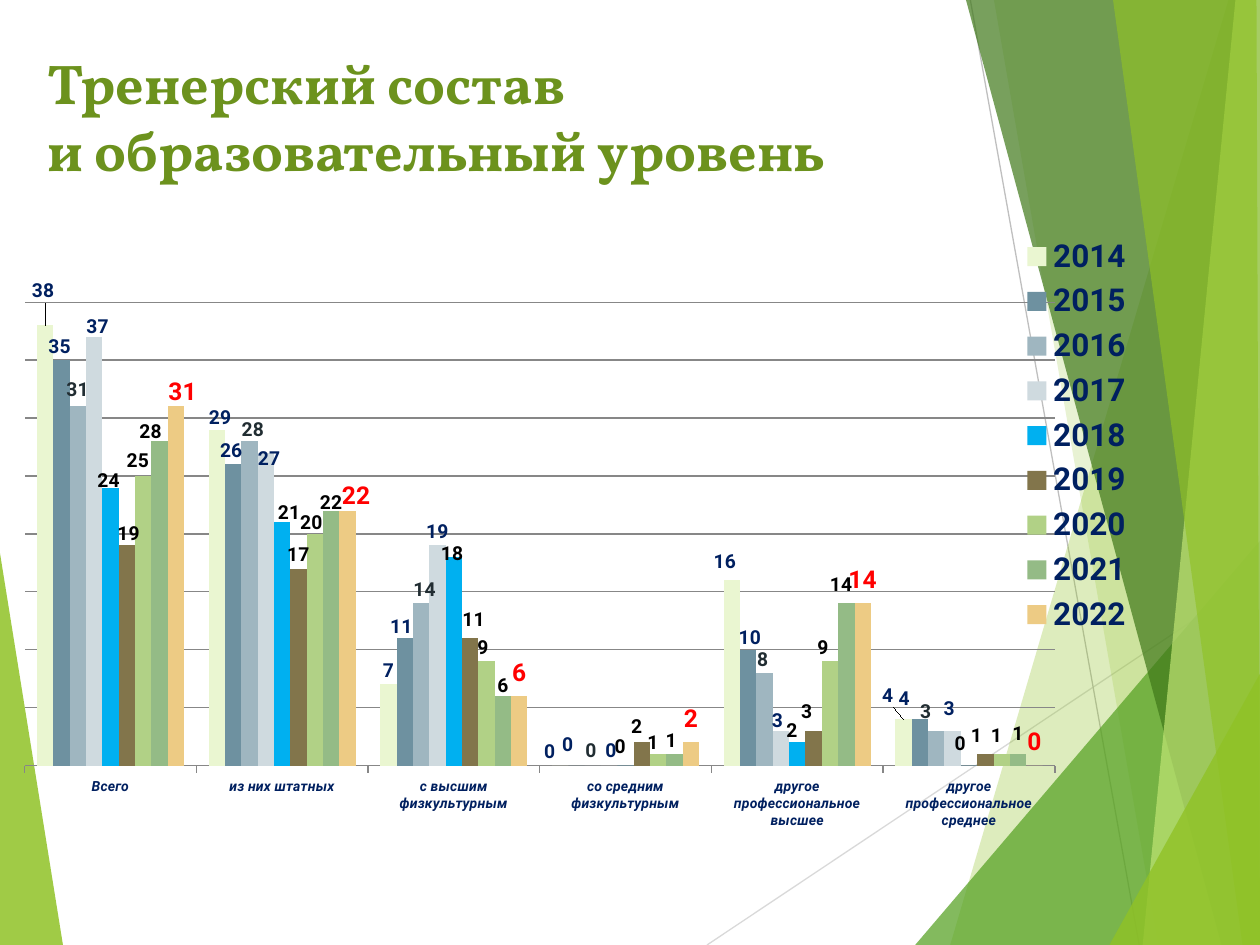
from lxml.etree import SubElement
from pptx import Presentation
from pptx.chart.data import CategoryChartData
from pptx.dml.color import RGBColor
from pptx.enum.chart import XL_CHART_TYPE as CHART, XL_LABEL_POSITION as LABEL
from pptx.enum.chart import XL_LEGEND_POSITION as LEGEND, XL_TICK_MARK as TICK
from pptx.enum.shapes import MSO_CONNECTOR as CONN
from pptx.enum.text import MSO_ANCHOR as ANCHOR
from pptx.oxml import parse_xml
from pptx.oxml.ns import nsdecls, qn
from pptx.util import Pt

COLORS = {
    "lime": "90C226", "green": "54A021", "forest": "3F7819", "pale": "C0E474",
    "title": "6C921D", "navy": "002060", "slate": "212D32", "black": "000000",
    "red": "FF0000", "grid": "878787", "line": "BFBFBF", "light_line": "D9D9D9",
}
CHART_W, CHART_H = 686.2, 345.6
LEFT_WEDGE = ([(0, 316), (35.5, 540), (0, 540)], "lime", 85)
LINES = [((404, 540), (720, 329), "light_line"), ((554.5, 0), (651, 540), "line")]
FACETS = [
    ([(702, 0), (543, 540), (720, 540), (720, 0)], "lime", 30),
    ([(567.5, 0), (661.5, 540), (720, 540), (720, 0)], "lime", 20),
    ([(523, 540), (720, 309), (720, 540)], "green", 72),
    ([(552.5, 0), (698.5, 540), (720, 540), (720, 0)], "forest", 70),
    ([(706.5, 0), (653, 540), (720, 540), (720, 0)], "pale", 70),
    ([(636, 0), (710, 540), (720, 540), (718.5, 0)], "lime", 65),
    ([(634.5, 540), (720, 385), (720, 540)], "lime", 80),
]
CATEGORIES = [
    "Всего", "из них штатных", "с высшим физкультурным", "со средним физкультурным",
    "другое профессиональное высшее", "другое профессиональное среднее",
]
# name, fill, label colour, label size, values, label shifts in points
SERIES = [
    ("2014", "EAF6D1", "navy", 11, (38, 29, 7, 0, 16, 4),
     [(-1, -10), (2, 3), (0, 2), (-6, 2), (-4, -1), (-9, -4)]),
    ("2015", "6E91A0", "navy", 11, (35, 26, 11, 0, 10, 4),
     [(-1, 2), (-1, 2), (-2, 3), (-5, -2), (1, 3), (-9, -2)]),
    ("2016", "9FB6C0", "slate", 11, (31, 28, 14, 0, 8, 3),
     [(0, 0), (2, 3), (2, 2), (-1, 1), (-1, 2), (-6, -1)]),
    ("2017", "CFDADF", "navy", 11, (37, 27, 19, 0, 3, 3),
     [(2, 4), (2, 13), (0, 2), (1, 1), (-2, 4), (-2, -3)]),
    ("2018", "00B0F0", "black", 11, (24, 21, 18, 0, 2, 0),
     [(-1, 6), (4, 4), (-1, 8), (-3, -1), (-3, 3), (-5, -3)]),
    ("2019", "82754B", "black", 11, (19, 17, 11, 2, 3, 1),
     [(1, 3), (0, 2), (2, -1), (-3, 1), (-4, -1), (-5, -1)]),
    ("2020", "B1D186", "black", 11, (25, 20, 9, 1, 9, 1),
     [(-3, 1), (-2, 3), (-2, 2), (-3, 3), (-4, 2), (-3, -1)]),
    ("2021", "94BB86", "black", 11, (28, 22, 6, 1, 14, 1),
     [(-5, 4), (0, 5), (0, 4), (-2, 2), (-3, -1), (0, -2)]),
    ("2022", "EDCB84", "red", 14, (31, 22, 6, 2, 14, 0),
     [(4, 3), (5, 3), (0, -2), (0, -2), (0, -2), (0, -2)]),
]


def rgb(name):
    return RGBColor.from_string(COLORS[name])


def style_font(font, face, size, color, bold=True):
    font.name, font.size, font.bold = face, Pt(size), bold
    font.color.rgb = rgb(color)


def add_facet(slide, points, color, opacity):
    builder = slide.shapes.build_freeform(*points[0], scale=Pt(1))
    builder.add_line_segments(points[1:], close=True)
    sp = builder.convert_to_shape()
    sp.shadow.inherit = False
    sp.fill.solid()
    sp.fill.fore_color.rgb = rgb(color)
    sp.line.fill.background()
    fill = sp._element.spPr.find(qn("a:solidFill"))
    SubElement(fill[0], qn("a:alpha"), val=str(opacity * 1000))


def add_line(slide, start, end, color):
    ln = slide.shapes.add_connector(CONN.STRAIGHT, *map(Pt, start + end))
    ln.line.color.rgb = rgb(color)
    ln.line.width = Pt(0.75)
    SubElement(ln._element.spPr, qn("a:effectLst"))


def add_title(slide, lines):
    tf = slide.shapes.add_textbox(Pt(20), Pt(21), Pt(648), Pt(90)).text_frame
    tf.word_wrap = True
    tf.vertical_anchor = ANCHOR.MIDDLE
    p = tf.paragraphs[0]
    for i, line in enumerate(lines):
        if i:
            p.add_line_break()
        r = p.add_run()
        r.text = line
        style_font(r.font, "Vollkorn", 32, "title")


def layout_xml(**values):
    items = "".join(f'<c:{key} val="{value}"/>' for key, value in values.items())
    return parse_xml(f'<c:layout {nsdecls("c")}><c:manualLayout>{items}'
                     '</c:manualLayout></c:layout>')


def set_layout(parent, layout, before):
    for old in parent.findall(qn("c:layout")):
        parent.remove(old)
    parent.find(qn(before)).addnext(layout)


def style_series(series, fill, color, size, shifts):
    series.format.fill.solid()
    series.format.fill.fore_color.rgb = RGBColor.from_string(fill)
    series.invert_if_negative = False
    labels = series.data_labels
    labels.show_value = True
    labels.position = LABEL.OUTSIDE_END
    style_font(labels.font, "Roboto", size, color)
    for i, (dx, dy) in enumerate(shifts):
        label = series.points[i].data_label
        style_font(label.font, "Roboto", size, color)
        label.position = LABEL.OUTSIDE_END
        node = series._element.xpath(f".//c:dLbl[c:idx/@val={i}]")[0]
        shift = layout_xml(x=round(dx / CHART_W, 4), y=round(dy / CHART_H, 4))
        set_layout(node, shift, "c:idx")


def style_axes(chart):
    cat, val = chart.category_axis, chart.value_axis
    style_font(cat.tick_labels.font, "Roboto", 8, "navy")
    cat.tick_labels.font.italic = True
    cat.major_tick_mark = TICK.OUTSIDE
    val.minimum_scale, val.maximum_scale, val.major_unit = 0, 40, 5
    val.has_major_gridlines = True
    val.visible = False
    for line in (cat.format.line, val.major_gridlines.format.line):
        line.color.rgb = rgb("grid")
        line.width = Pt(0.75)


def add_column_chart(slide):
    data = CategoryChartData()
    data.categories = CATEGORIES
    for name, _, _, _, values, _ in SERIES:
        data.add_series(name, values)
    chart = slide.shapes.add_chart(CHART.COLUMN_CLUSTERED, Pt(-36.7), Pt(128.2),
                                   Pt(CHART_W), Pt(CHART_H), data).chart
    style_font(chart.font, "Roboto", 18, "black", False)
    chart.has_title = False
    plot = chart.plots[0]
    plot.gap_width, plot.overlap, plot.vary_by_categories = 150, 0, False
    for series, (_, fill, color, size, _, shifts) in zip(plot.series, SERIES):
        style_series(series, fill, color, size, shifts)
    style_axes(chart)
    chart.has_legend = True
    legend = chart.legend
    legend.position = LEGEND.RIGHT
    legend.include_in_layout = False
    style_font(legend.font, "Roboto", 18, "navy")
    set_layout(legend._element, layout_xml(xMode="edge", yMode="edge", x=0.9, y=0.01,
                                           w=0.1, h=0.68), "c:legendPos")
    area = chart._chartSpace.chart.plotArea
    for old in area.findall(qn("c:layout")):
        area.remove(old)
    area.insert(0, layout_xml(layoutTarget="inner", xMode="edge", yMode="edge",
                              x=0.074, y=0.129, w=0.858, h=0.767))


def main():
    prs = Presentation()
    prs.slide_width, prs.slide_height = Pt(720), Pt(540)
    slide = prs.slides.add_slide(prs.slide_layouts[6])
    add_facet(slide, *LEFT_WEDGE)
    for line in LINES:
        add_line(slide, *line)
    for facet in FACETS:
        add_facet(slide, *facet)
    add_title(slide, ["Тренерский состав", "и образовательный уровень"])
    add_column_chart(slide)
    prs.save("out.pptx")


if __name__ == "__main__":
    main()
